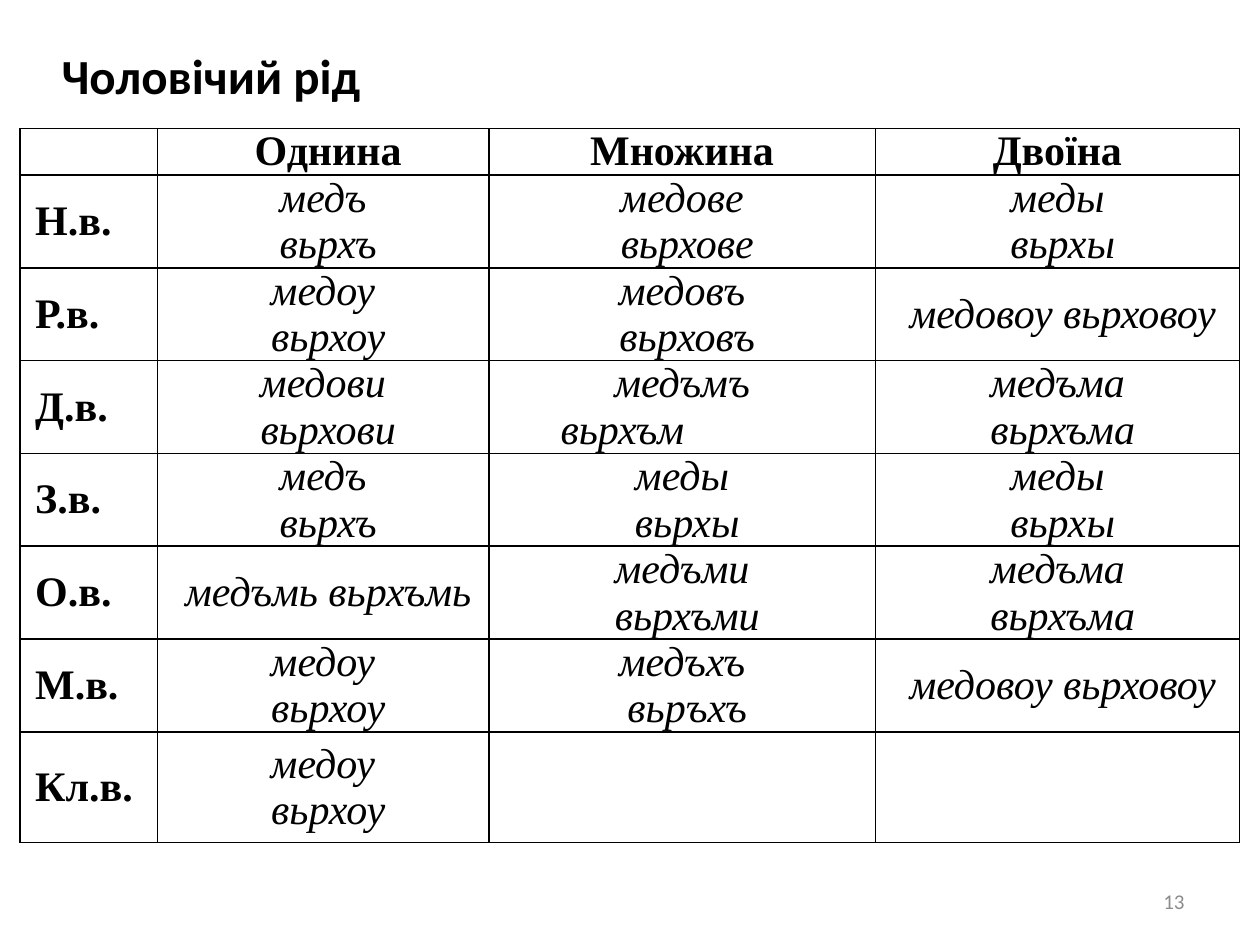
from lxml import etree
from pptx import Presentation
from pptx.dml.color import RGBColor
from pptx.enum.text import MSO_ANCHOR, MSO_AUTO_SIZE, PP_ALIGN
from pptx.oxml.ns import qn
from pptx.util import Inches, Pt

TITLE = "Чоловічий рід"
PAGE = "13"
HEADERS = ["", "Однина", "Множина ", "Двоїна "]
# Each line of a cell is a paragraph of its own
CASES = [
    ("Н.в.", "медъ \nвьрхъ", "медове \nвьрхове", "меды \nвьрхы"),
    ("Р.в.", "медоу \nвьрхоу", "медовъ \nвьрховъ", "медовоу вьрховоу"),
    ("Д.в.", "медови \nвьрхови", "медъмъ \nвьрхъм", "медъма \nвьрхъма"),
    ("З.в.", "медъ \nвьрхъ", "меды \nвьрхы", "меды \nвьрхы"),
    ("О.в.", "медъмь вьрхъмь", "медъми \nвьрхъми", "медъма \nвьрхъма"),
    ("М.в.", "медоу \nвьрхоу", "медъхъ \nвьръхъ", "медовоу вьрховоу"),
    ("Кл.в.", "медоу \nвьрхоу", "", ""),
]
COL_WIDTHS = [1.09, 2.63, 3.07, 2.89]
ROW_HEIGHTS = [0.36] + [0.7] * 6 + [0.88]
TABLE_HEIGHT = 6.08
INDENT = 0.08
LEFT_SET = {"вьрхъм": 0.53}  # the one form set from the left, with its indent
LINE_PITCH = 26.5


def add_run(p, text, size, font, color="000000", bold=False, italic=False):
    r = p.add_run()
    r.text = text
    f = r.font
    f.size, f.name, f.bold, f.italic = Pt(size), font, bold, italic
    f.color.rgb = RGBColor.from_string(color)


def add_text(slide, box, text, align, anchor, **font):
    sp = slide.shapes.add_textbox(*(Inches(v) for v in box))
    tf = sp.text_frame
    tf.word_wrap = True
    tf.vertical_anchor = anchor
    p = tf.paragraphs[0]
    p.alignment = align
    add_run(p, text, font="Calibri", **font)
    return tf


def set_borders(cell, color="000000", width=1):
    tc_pr = cell._tc.get_or_add_tcPr()
    for i, side in enumerate(("lnL", "lnR", "lnT", "lnB")):
        ln = etree.Element(qn(f"a:{side}"), w=str(Pt(width)))
        fill = etree.SubElement(ln, qn("a:solidFill"))
        etree.SubElement(fill, qn("a:srgbClr"), val=color)
        tc_pr.insert(i, ln)


def format_paragraph(p, align, indent):
    p.alignment = align
    p.line_spacing = Pt(LINE_PITCH)
    p_pr = p._p.get_or_add_pPr()
    p_pr.set("marL", str(Inches(indent)))
    p_pr.set("indent", "0")


def fill_cell(cell, text, row, col):
    cell.margin_left = cell.margin_right = Inches(0.04)
    cell.margin_top = cell.margin_bottom = 0
    cell.vertical_anchor = MSO_ANCHOR.MIDDLE
    cell.fill.background()
    set_borders(cell)
    if not text:
        return
    heading = row == 0 or col == 0
    tf = cell.text_frame
    for i, line in enumerate(text.split("\n")):
        p = tf.add_paragraph() if i else tf.paragraphs[0]
        left = col == 0 or line in LEFT_SET
        format_paragraph(p, PP_ALIGN.LEFT if left else PP_ALIGN.CENTER,
                         LEFT_SET.get(line, INDENT))
        add_run(p, line, 24, "Times New Roman", bold=heading, italic=not heading)


def add_declension_table(slide):
    rows = [HEADERS, *CASES]
    frame = slide.shapes.add_table(
        len(rows), len(HEADERS), Inches(0.16), Inches(1.02),
        Inches(sum(COL_WIDTHS)), Inches(TABLE_HEIGHT))
    table = frame.table
    table.first_row = table.horz_banding = False
    for column, width in zip(table.columns, COL_WIDTHS):
        column.width = Inches(width)
    for row, height in zip(table.rows, ROW_HEIGHTS):
        row.height = Inches(height)
    frame.height = Inches(TABLE_HEIGHT)  # row heights reset it
    for r, texts in enumerate(rows):
        for c, text in enumerate(texts):
            fill_cell(table.cell(r, c), text, r, c)


def main():
    prs = Presentation()
    prs.slide_width, prs.slide_height = Inches(10), Inches(7.5)
    slide = prs.slides.add_slide(prs.slide_layouts[6])
    add_text(slide, (7.17, 6.95, 2.33, 0.4), PAGE, PP_ALIGN.RIGHT,
             MSO_ANCHOR.MIDDLE, size=12, color="8C8C8C")
    add_declension_table(slide)
    title = add_text(slide, (0.39, 0.31, 2.97, 0.57), TITLE, PP_ALIGN.LEFT,
                     MSO_ANCHOR.TOP, size=28, bold=True)
    title.auto_size = MSO_AUTO_SIZE.SHAPE_TO_FIT_TEXT
    prs.save("out.pptx")


if __name__ == "__main__":
    main()
